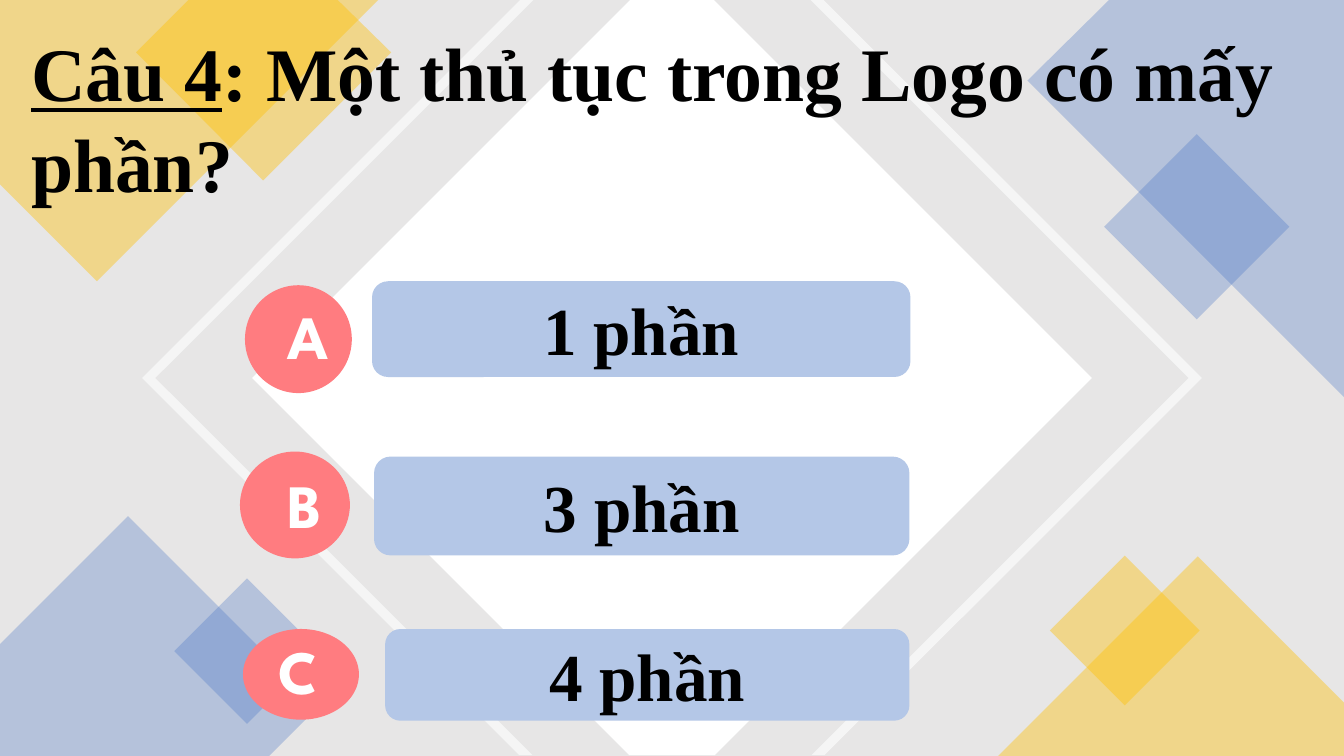
from dataclasses import dataclass

from lxml import etree
from pptx import Presentation, util as u
from pptx.dml.color import RGBColor
from pptx.enum import shapes, text
from pptx.oxml.ns import qn

PX = 9144  # EMU in one px, 100 px to the inch
WIDTH, HEIGHT = 1333, 750
GOLD, BLUE, WHITE, BLACK = "FFC000", "4472C4", "FFFFFF", "000000"
GREY, PALE_BLUE, CORAL = "E7E6E6", "B4C7E7", "FF7C80"
SERIF, ROUND = "Times New Roman", "League Spartan"

Point = tuple[int, int]
Box = tuple[int, int, int, int]


@dataclass(frozen=True)
class Polygon:
    contours: list[list[Point]]
    color: str
    opacity: int = 100


@dataclass(frozen=True)
class Diamond:
    """A square turned by 45 degrees, given by its unturned box."""
    left: int
    top: int
    side: int
    color: str
    opacity: int


@dataclass(frozen=True)
class Answer:
    letter: str
    wording: str
    bar: Box
    badge: Box
    letter_box: Box


RIGHT_CHEVRON = [(804, 0), (817, 0), (1192, 375), (818, 749), (805, 749), (1179, 375)]
LEFT_CHEVRON = [(WIDTH - x, y) for x, y in RIGHT_CHEVRON]

BACKDROP = [
    Polygon([[(0, 0), (375, 0), (96, 279), (0, 183)]], GOLD, 40),
    Polygon([[(187, 0), (335, 0), (388, 52), (261, 179), (135, 52)]], GOLD, 40),
    Polygon([[(1100, 0), (1333, 0), (1333, 394), (1019, 80)]], BLUE, 30),
    Diamond(1122, 160, 130, BLUE, 30),
    Polygon([[(127, 512), (316, 701), (267, 750), (0, 750), (0, 639)]], BLUE, 30),
    Diamond(194, 595, 102, BLUE, 30),
    Polygon([[(625, 0), (708, 0), (1083, 375), (709, 749), (624, 749), (250, 375)]], WHITE),
    Polygon([RIGHT_CHEVRON, LEFT_CHEVRON], WHITE, 60),
    Polygon([[(1188, 552), (1333, 697), (1333, 750), (990, 750)]], GOLD, 40),
    Diamond(1063, 573, 105, GOLD, 40),
]

ANSWERS = [
    Answer("A", "1 phần", (369, 279, 534, 95), (243, 283, 106, 107), (275, 291, 39, 84)),
    Answer("B", "3 phần", (371, 453, 531, 98), (238, 448, 109, 106), (275, 458, 39, 84)),
    Answer("C", "4 phần", (382, 624, 520, 91), (241, 624, 115, 90), (261, 623, 69, 84)),
]


def rgb(color: str) -> RGBColor:
    return RGBColor.from_string(color)


def paint(shape, color: str, opacity: int = 100) -> None:
    shape.shadow.inherit = False
    shape.line.fill.background()
    shape.fill.solid()
    shape.fill.fore_color.rgb = rgb(color)
    if opacity < 100:
        color_node = shape.fill._xPr.find(f".//{qn('a:srgbClr')}")
        etree.SubElement(color_node, qn("a:alpha"), val=str(opacity * 1000))


def add_preset(slide, kind: shapes.MSO_SHAPE, box: Box, color: str, opacity: int = 100):
    shape = slide.shapes.add_shape(kind, *(value * PX for value in box))
    paint(shape, color, opacity)
    return shape


def add_polygon(slide, polygon: Polygon) -> None:
    first, *others = polygon.contours
    builder = slide.shapes.build_freeform(*first[0], scale=PX)
    builder.add_line_segments(first[1:], close=True)
    for contour in others:
        builder.move_to(*contour[0])
        builder.add_line_segments(contour[1:], close=True)
    paint(builder.convert_to_shape(), polygon.color, polygon.opacity)


def add_diamond(slide, diamond: Diamond) -> None:
    box = (diamond.left, diamond.top, diamond.side, diamond.side)
    shape = add_preset(slide, shapes.MSO_SHAPE.RECTANGLE, box, diamond.color, diamond.opacity)
    shape.rotation = 45


def add_run(paragraph, wording: str, *, size: int, font: str = SERIF,
            color: str = BLACK, underline: bool = False) -> None:
    run = paragraph.add_run()
    run.text = wording
    run.font.size = u.Pt(size)
    run.font.name = font
    run.font.bold = True
    run.font.underline = underline
    run.font.color.rgb = rgb(color)


def add_text_box(slide, box: Box):
    """Add a wrapping text box and return its first paragraph."""
    frame = slide.shapes.add_textbox(*(value * PX for value in box)).text_frame
    frame.word_wrap = True
    frame.auto_size = text.MSO_AUTO_SIZE.SHAPE_TO_FIT_TEXT
    return frame.paragraphs[0]


def add_answer(slide, answer: Answer) -> None:
    bar = add_preset(slide, shapes.MSO_SHAPE.ROUNDED_RECTANGLE, answer.bar, PALE_BLUE)
    bar.text_frame.vertical_anchor = text.MSO_ANCHOR.MIDDLE
    wording = bar.text_frame.paragraphs[0]
    wording.alignment = text.PP_ALIGN.CENTER
    add_run(wording, answer.wording, size=48)

    add_preset(slide, shapes.MSO_SHAPE.OVAL, answer.badge, CORAL)
    letter = add_text_box(slide, answer.letter_box)
    letter.alignment = text.PP_ALIGN.CENTER
    add_run(letter, answer.letter, size=44, font=ROUND, color=WHITE)


def main() -> None:
    presentation = Presentation()
    presentation.slide_width = WIDTH * PX
    presentation.slide_height = HEIGHT * PX
    slide = presentation.slides.add_slide(presentation.slide_layouts[6])

    add_preset(slide, shapes.MSO_SHAPE.RECTANGLE, (0, 0, WIDTH, HEIGHT), GREY)
    for piece in BACKDROP:
        if isinstance(piece, Polygon):
            add_polygon(slide, piece)
        else:
            add_diamond(slide, piece)

    for answer in ANSWERS:
        add_answer(slide, answer)

    question = add_text_box(slide, (21, 21, 1312, 192))
    add_run(question, "Câu 4", size=54, underline=True)
    add_run(question, ": Một thủ tục trong Logo có mấy phần?", size=54)

    presentation.save("out.pptx")


if __name__ == "__main__":
    main()
